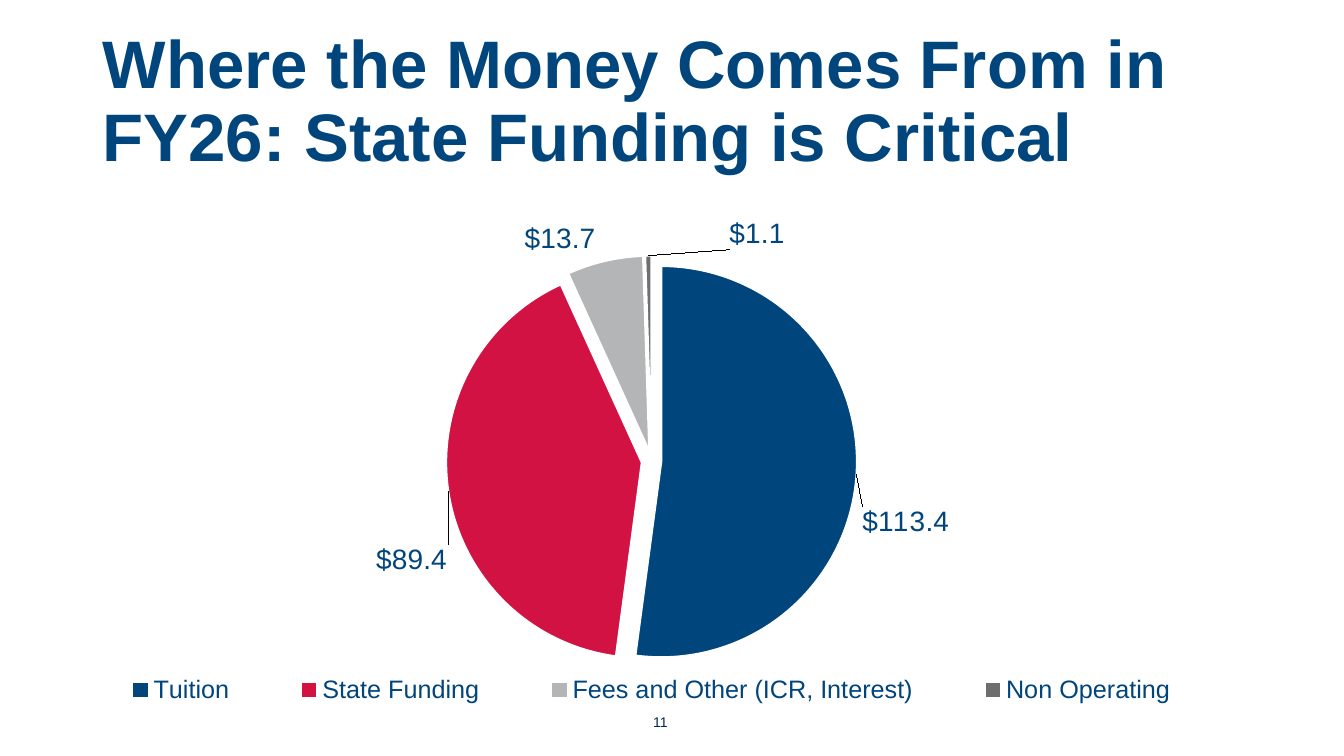
from lxml.etree import SubElement
from pptx import Presentation
from pptx.chart.data import CategoryChartData
from pptx.dml.color import RGBColor
from pptx.enum.chart import XL_CHART_TYPE, XL_LABEL_POSITION, XL_LEGEND_POSITION
from pptx.enum.text import MSO_ANCHOR, MSO_AUTO_SIZE, PP_ALIGN
from pptx.oxml import parse_xml
from pptx.oxml.ns import nsdecls, qn
from pptx.util import Emu, Pt

PX = 9144  # EMU per px, 100 px to the inch
FONT = "Arial"
COLORS = {
    "blue": "00457C",
    "red": "D11242",
    "silver": "B3B5B7",
    "gray": "6D6E70",
    "navy": "002856",
    "white": "FFFFFF",
}
MONEY = r'"$"#,##0.0_);[Red]\("$"#,##0.0\)'
# Source of money, $ millions, slice colour, label shift (fractions of the chart)
SOURCES = [
    ("Tuition", 113.4, "blue", (0, 0.09)),
    ("State Funding", 89.4, "red", (0.01, 0.1)),
    ("Fees and Other (ICR, Interest)", 13.7, "silver", None),
    ("Non Operating", 1.1, "gray", (0.09, 0)),
]


def box(*lengths):
    return [Emu(n * PX) for n in lengths]


def rgb(name):
    return RGBColor.from_string(COLORS[name])


def style(font, size, color, bold=False):
    font.name, font.size, font.bold = FONT, Pt(size), bold
    font.color.rgb = rgb(color)


def layout_xml(**values):
    """Manual chart layout; string values are modes, numbers are fractions."""
    layout = parse_xml(f"<c:layout {nsdecls('c')}/>")
    manual = SubElement(layout, qn("c:manualLayout"))
    for tag, value in values.items():
        SubElement(manual, qn(f"c:{tag}")).set("val", str(value))
    return layout


def set_layout(element, after, **values):
    for old in element.findall(qn("c:layout")):
        element.remove(old)
    layout = layout_xml(**values)
    if after is None:
        element.insert(0, layout)
    else:
        element.find(qn(after)).addnext(layout)


def add_title(s, text):
    title = s.shapes.title
    title.left, title.top, title.width, title.height = box(92, 20, 1150, 165)
    tf = title.text_frame
    tf.text = text
    tf.word_wrap, tf.auto_size = True, MSO_AUTO_SIZE.NONE
    tf.vertical_anchor = MSO_ANCHOR.MIDDLE
    p = tf.paragraphs[0]
    p.alignment, p.line_spacing = PP_ALIGN.LEFT, 0.9
    style(p.font, 48, "blue", bold=True)


def shift_label(label, dx, dy):
    label.position = XL_LABEL_POSITION.OUTSIDE_END
    style(label.font, 20, "blue")


def add_pie(s):
    data = CategoryChartData(number_format=MONEY)
    data.categories = [name for name, *_ in SOURCES]
    data.add_series("Series 1", [value for _, value, *_ in SOURCES])
    chart = s.shapes.add_chart(XL_CHART_TYPE.PIE, *box(31, 202, 1243, 516), data).chart
    chart.has_title = False
    style(chart.font, 10, "blue")

    # Legend along the bottom
    chart.has_legend = True
    legend = chart.legend
    legend.position, legend.include_in_layout = XL_LEGEND_POSITION.BOTTOM, False
    style(legend.font, 18, "blue")
    set_layout(legend._element, "c:legendPos", xMode="edge", yMode="edge",
               x=0.03, y=0.9, w=0.93, h=0.07)

    # Pie area
    plot = chart.plots[0]
    plot.vary_by_categories = True
    set_layout(chart._chartSpace.chart.plotArea, None, layoutTarget="inner",
               xMode="edge", yMode="edge", x=0.33, y=0.1, w=0.33, h=0.79)

    # Value labels for the whole series
    series = plot.series[0]
    labels = series.data_labels
    labels.show_value = True
    labels.number_format, labels.number_format_is_linked = MONEY, False
    labels.position = XL_LABEL_POSITION.OUTSIDE_END
    style(labels.font, 20, "blue")

    # Slices, with their moved labels
    for i, (_, _, color, shift) in enumerate(SOURCES):
        point = series.points[i]
        point.format.fill.solid()
        point.format.fill.fore_color.rgb = rgb(color)
        point.format.line.color.rgb = rgb("white")
        point.format.line.width = Pt(1.5)
        if shift:
            style(point.data_label.font, 20, "blue")
            point.data_label.position = XL_LABEL_POSITION.OUTSIDE_END
    moved = [shift for *_, shift in SOURCES if shift]
    for label, (dx, dy) in zip(labels._element.findall(qn("c:dLbl")), moved):
        set_layout(label, "c:idx", x=dx, y=dy)
        number = parse_xml(f"<c:numFmt {nsdecls('c')} sourceLinked='0'/>")
        number.set("formatCode", MONEY)
        label.find(qn("c:layout")).addnext(number)
    explosion = parse_xml(f"<c:explosion {nsdecls('c')} val='5'/>")
    series._element.find(qn("c:dPt")).addprevious(explosion)


def add_page_number(s, number):
    tf = s.shapes.add_textbox(*box(638, 703, 57, 27)).text_frame
    tf.word_wrap = True
    tf.text = number
    style(tf.paragraphs[0].font, 10, "navy")


def main():
    prs = Presentation()
    prs.slide_width, prs.slide_height = box(1333, 750)
    s = prs.slides.add_slide(prs.slide_layouts[5])
    add_title(s, "Where the Money Comes From in FY26: State Funding is Critical")
    add_pie(s)
    add_page_number(s, "11")
    prs.save("out.pptx")


if __name__ == "__main__":
    main()
